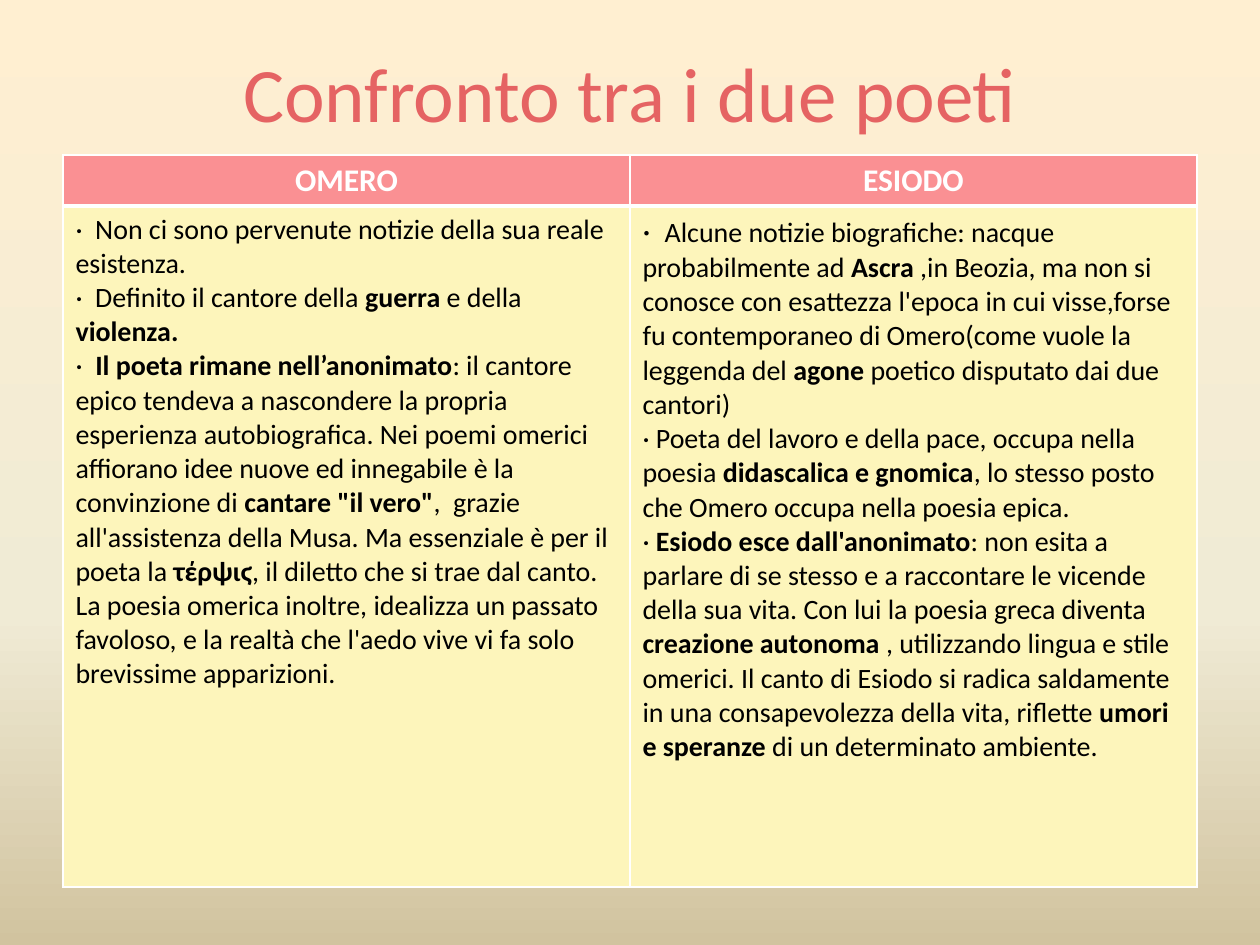
"""Builds a slide that compares the poets Omero and Esiodo in a table."""
import copy

import pptx
import pptx.dml.color
import pptx.enum.text
import pptx.oxml
import pptx.oxml.ns
import pptx.util

SCALE = 914400 // 126
COLORS = {
    "title": "E56363", "header": "FA9093", "body": "FDF5BB",
    "white": "FFFFFF", "black": "000000",
    "sky": "FFEFD1", "haze": "F0EBD5", "sand": "D1C39F",
}
CENTER = pptx.enum.text.PP_ALIGN.CENTER
LEFT = pptx.enum.text.PP_ALIGN.LEFT

POETS = {
    "OMERO": [
        ("·  ", 16, "Non ci sono pervenute notizie della sua reale esistenza."),
        ("·  ", 16, "Definito il cantore della *guerra* e della *violenza.*"),
        ("·  ", 16, "*Il poeta rimane nell’anonimato*: il cantore epico tendeva a nascondere "
         "la propria esperienza autobiografica. Nei poemi omerici affiorano idee nuove ed "
         "innegabile è la convinzione di *cantare \"il vero\"*,  grazie all'assistenza della "
         "Musa. Ma essenziale è per il poeta la *τέρψιϛ*, il diletto che si trae dal canto. "
         "La poesia omerica inoltre, idealizza un passato favoloso, e la realtà che l'aedo "
         "vive vi fa solo brevissime apparizioni."),
    ],
    "ESIODO": [
        ("·  ", 18, "Alcune notizie biografiche: nacque probabilmente ad *Ascra* ,in Beozia, "
         "ma non si conosce con esattezza l'epoca in cui visse,forse fu contemporaneo di "
         "Omero(come vuole la leggenda del *agone *poetico disputato dai due cantori)"),
        ("· ", 16, "Poeta del lavoro e della pace, occupa nella poesia *didascalica e "
         "gnomica*, lo stesso posto che Omero occupa nella poesia epica."),
        ("· ", 16, "*Esiodo esce dall'anonimato*: non esita a parlare di se stesso e a "
         "raccontare le vicende della sua vita. Con lui la poesia greca diventa *creazione "
         "autonoma *, utilizzando lingua e stile omerici. Il canto di Esiodo si radica "
         "saldamente in una consapevolezza della vita, riflette *umori e speranze *di un "
         "determinato ambiente."),
    ],
}


def px(length):
    return pptx.util.Emu(length * SCALE)


def rgb(name):
    return pptx.dml.color.RGBColor.from_string(COLORS[name])


class Painter:
    """Holds the text style and the current slide."""

    def __init__(self, page, font="Calibri"):
        self.page = page
        self.font = font

    def background(self, stops):
        fill = self.page.background.fill
        fill.gradient()
        fill.gradient_angle = 270
        stop_list = next(self.page.element.iter(pptx.oxml.ns.qn("a:gsLst")))
        while len(stop_list) < len(stops):
            stop_list.append(copy.deepcopy(stop_list[0]))
        for stop, (position, color) in zip(fill.gradient_stops, stops):
            stop.position = position
            stop.color.rgb = rgb(color)

    def span(self, para, text, size, color, bold=False):
        span = para.add_run()
        span.text = text
        span.font.name = self.font
        span.font.size = pptx.util.Pt(size)
        span.font.bold = bold
        span.font.color.rgb = rgb(color)

    def title(self, left, top, width, height, text):
        box = self.page.shapes.add_textbox(px(left), px(top), px(width), px(height))
        frame = box.text_frame
        frame.word_wrap = True
        frame.vertical_anchor = pptx.enum.text.MSO_ANCHOR.MIDDLE
        para = frame.paragraphs[0]
        para.alignment = CENTER
        self.span(para, text, 44, "title")

    def borders(self, cell, **widths):
        properties = cell._tc.get_or_add_tcPr()
        for index, side in enumerate("LRTB"):
            line = pptx.oxml.parse_xml(
                f'<a:ln{side} {pptx.oxml.ns.nsdecls("a")} '
                f'w="{pptx.util.Pt(widths.get(side, 1))}"><a:solidFill>'
                f'<a:srgbClr val="{COLORS["white"]}"/></a:solidFill></a:ln{side}>')
            properties.insert(index, line)

    def paint_cell(self, cell, color, **widths):
        cell.fill.solid()
        cell.fill.fore_color.rgb = rgb(color)
        self.borders(cell, **widths)

    def header_cell(self, cell, text):
        self.paint_cell(cell, "header", B=3)
        para = cell.text_frame.paragraphs[0]
        para.alignment = CENTER
        self.span(para, text, 18, "white", bold=True)

    def body_cell(self, cell, notes):
        self.paint_cell(cell, "body", T=3)
        frame = cell.text_frame
        for index, (bullet, bullet_size, text) in enumerate(notes):
            para = frame.add_paragraph() if index else frame.paragraphs[0]
            para.alignment = LEFT
            self.span(para, bullet, bullet_size, "black")
            for part, words in enumerate(text.split("*")):
                if words:
                    self.span(para, words, 16, "black", bold=part % 2 == 1)

    def table(self, left, top, width, row_heights, columns):
        frame = self.page.shapes.add_table(
            len(row_heights), len(columns), px(left), px(top), px(width), px(sum(row_heights)))
        table = frame.table
        for row, height in zip(table.rows, row_heights):
            row.height = px(height)
        for index, (heading, notes) in enumerate(columns.items()):
            table.columns[index].width = px(width // len(columns))
            self.header_cell(table.cell(0, index), heading)
            self.body_cell(table.cell(1, index), notes)


def main():
    deck = pptx.Presentation()
    deck.slide_width, deck.slide_height = px(1260), px(945)
    painter = Painter(deck.slides.add_slide(deck.slide_layouts[6]))
    painter.background([(0, "sky"), (0.65, "haze"), (1, "sand")])
    painter.title(63, 38, 1134, 107, "Confronto tra i due poeti")
    painter.table(63, 155, 1134, [51, 681], POETS)
    deck.save("out.pptx")


if __name__ == "__main__":
    main()
